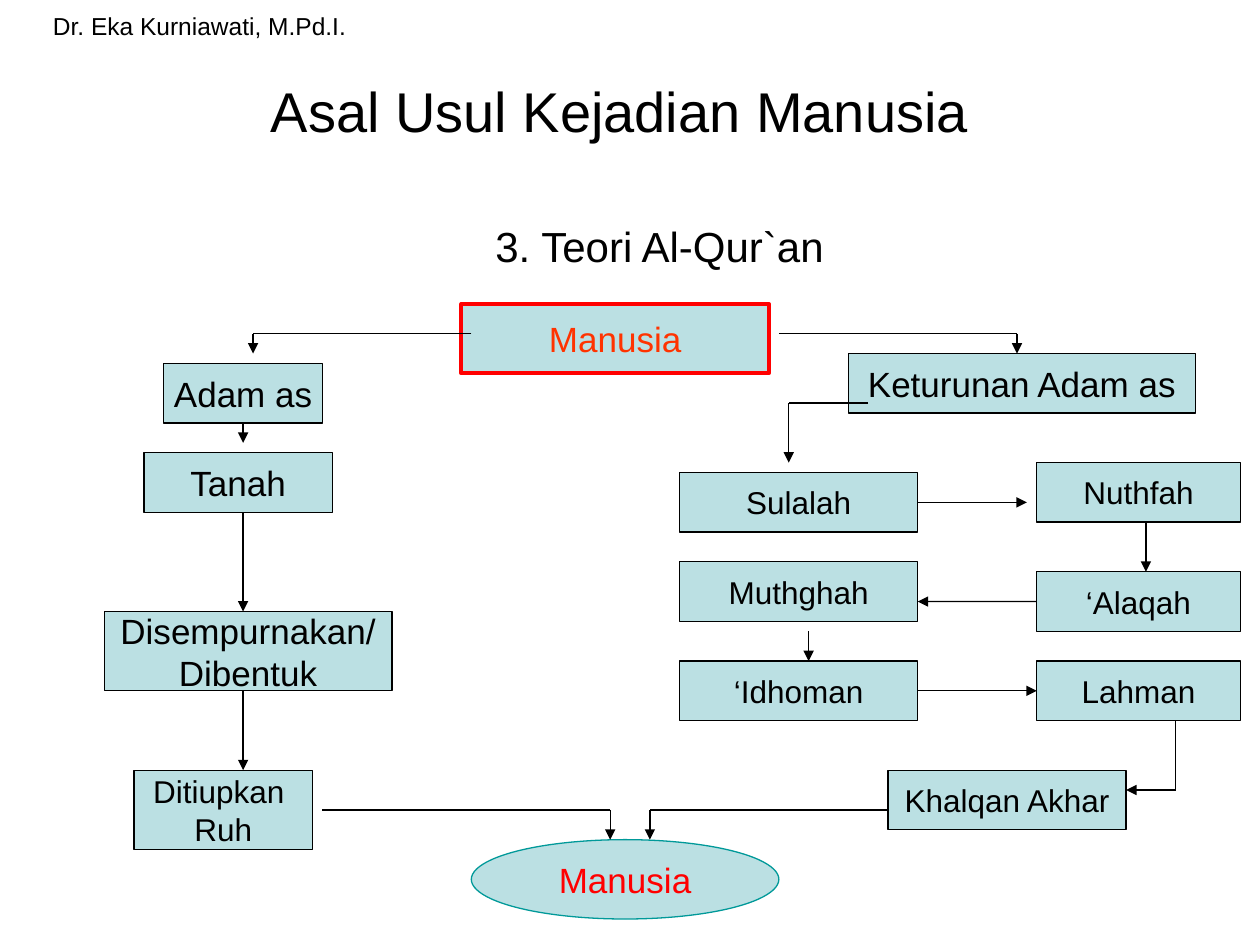
"""Builds the flow chart slide on the origin of mankind."""
from dataclasses import dataclass
from itertools import pairwise

from lxml.etree import SubElement
from pptx import Presentation
from pptx.dml.color import RGBColor
from pptx.enum.shapes import MSO_CONNECTOR as Link, MSO_SHAPE as Preset
from pptx.enum.text import MSO_ANCHOR as Anchor, PP_ALIGN as Align
from pptx.oxml.ns import qn
from pptx.util import Inches, Length, Pt


@dataclass(frozen=True)
class Theme:
    font: str = "Arial"
    ink: str = "000000"
    fill: str = "BBE0E3"
    red: str = "FF0000"
    orange: str = "FF3300"
    teal: str = "009999"
    title: int = 32
    subtitle: int = 24
    large: int = 20
    medium: int = 18
    small: int = 14
    thin: float = 0.75
    thick: float = 2.25


THEME = Theme()
WIDTH, HEIGHT = 10, 7.5
UNIT = WIDTH / 127
LEFT, TOP = 0.04, 0.05


@dataclass(frozen=True)
class Heading:
    text: str
    x: float
    y: float
    width: float
    height: float
    size: int
    anchor: Anchor = Anchor.TOP
    space_before: float = 0


@dataclass(frozen=True)
class Stage:
    text: str
    col: float
    row: float
    cols: float
    rows: float = 6
    size: int = THEME.medium
    colour: str = THEME.ink
    line: str = THEME.ink
    weight: float = THEME.thin
    preset: Preset = Preset.RECTANGLE

    def sites(self) -> list[tuple[float, float]]:
        mid_col, mid_row = self.col + self.cols / 2, self.row + self.rows / 2
        return [(mid_col, self.row), (self.col, mid_row),
                (mid_col, self.row + self.rows), (self.col + self.cols, mid_row)]


HEADINGS = [
    Heading("Asal Usul Kejadian Manusia", 0.067, 0.048, 0.85, 0.136, THEME.title, Anchor.MIDDLE),
    Heading("3. Teori Al-Qur`an", 0.047, 0.227, 0.953, 0.704, THEME.subtitle, space_before=4.8),
    Heading("Dr. Eka Kurniawati, M.Pd.I.", 0, 0.005, 0.317, 0.07, THEME.small),
]

STAGES = [
    Stage("Manusia", 46, 30, 31, 7, THEME.large, THEME.orange, THEME.red, THEME.thick),
    Stage("Adam as", 16, 36, 16, size=THEME.large),
    Stage("Keturunan Adam as", 85, 35, 35, size=THEME.large),
    Stage("Tanah", 14, 45, 19, size=THEME.large),
    Stage("Disempurnakan/\nDibentuk", 10, 61, 29, 8, THEME.large),
    Stage("Ditiupkan \nRuh", 13, 77, 18, 8),
    Stage("Sulalah", 68, 47, 24),
    Stage("Muthghah", 68, 56, 24),
    Stage("‘Idhoman", 68, 66, 24),
    Stage("Nuthfah", 104, 46, 20.5),
    Stage("‘Alaqah", 104, 57, 20.5),
    Stage("Lahman", 104, 66, 20.5),
    Stage("Khalqan Akhar", 89, 77, 24),
    Stage("Manusia", 47, 84, 31, 8, THEME.large, THEME.red, THEME.teal, preset=Preset.OVAL),
]

ROUTES = [
    [(47, 33), (25, 33), (25, 35)],
    [(24, 42), (24, 44)],
    [(24, 51), (24, 61)],
    [(24, 69), (24, 77)],
    [(78, 33), (102, 33), (102, 35)],
    [(87, 40), (79, 40), (79, 46)],
    [(92, 50), (103, 50)],
    [(115, 52), (115, 57)],
    [(104, 60), (92, 60)],
    [(81, 63), (81, 66)],
    [(92, 69), (104, 69)],
    [(118, 72), (118, 79), (113, 79)],
    [(32, 81), (61, 81), (61, 84)],
    [(89, 81), (65, 81), (65, 84)],
]


def at(col: float, row: float) -> tuple[Length, Length]:
    return Inches(LEFT + col * UNIT), Inches(TOP + row * UNIT)


def write(frame, text: str, size: int, colour: str, space_before: float = 0) -> None:
    frame.text = text
    for paragraph in frame.paragraphs:
        paragraph.alignment = Align.CENTER
        paragraph.space_before = Pt(space_before)
        for run in paragraph.runs:
            run.font.name = THEME.font
            run.font.size = Pt(size)
            run.font.color.rgb = RGBColor.from_string(colour)


def draw_heading(slide, heading: Heading) -> None:
    frame = slide.shapes.add_textbox(
        Inches(heading.x * WIDTH), Inches(heading.y * HEIGHT),
        Inches(heading.width * WIDTH), Inches(heading.height * HEIGHT)).text_frame
    frame.word_wrap = True
    frame.vertical_anchor = heading.anchor
    write(frame, heading.text, heading.size, THEME.ink, heading.space_before)


def draw_stage(slide, stage: Stage):
    node = slide.shapes.add_shape(
        stage.preset, *at(stage.col, stage.row),
        Inches(stage.cols * UNIT), Inches(stage.rows * UNIT))
    node.shadow.inherit = False
    node.fill.solid()
    node.fill.fore_color.rgb = RGBColor.from_string(THEME.fill)
    node.line.color.rgb = RGBColor.from_string(stage.line)
    node.line.width = Pt(stage.weight)
    node.text_frame.word_wrap = False
    node.text_frame.vertical_anchor = Anchor.MIDDLE
    write(node.text_frame, stage.text, stage.size, stage.colour)
    return node


def draw_route(slide, route: list[tuple[float, float]], joints: dict) -> None:
    for start, end in pairwise(route):
        link = slide.shapes.add_connector(Link.STRAIGHT, *at(*start), *at(*end))
        link.line.color.rgb = RGBColor.from_string(THEME.ink)
        link.line.width = Pt(THEME.thin)
        if end == route[-1]:
            SubElement(link.line._get_or_add_ln(), qn("a:tailEnd"), type="triangle")
        SubElement(link._element.spPr, qn("a:effectLst"))
        if start in joints:
            link.begin_connect(*joints[start])
        if end in joints:
            link.end_connect(*joints[end])


def main() -> None:
    deck = Presentation()
    deck.slide_width, deck.slide_height = Inches(WIDTH), Inches(HEIGHT)
    slide = deck.slides.add_slide(deck.slide_layouts[6])
    *titles, author = HEADINGS
    for title in titles:
        draw_heading(slide, title)
    joints = {}
    for stage in STAGES:
        node = draw_stage(slide, stage)
        if stage.preset == Preset.RECTANGLE:
            joints.update({site: (node, index) for index, site in enumerate(stage.sites())})
    for route in ROUTES:
        draw_route(slide, route, joints)
    draw_heading(slide, author)
    deck.save("out.pptx")


if __name__ == "__main__":
    main()
